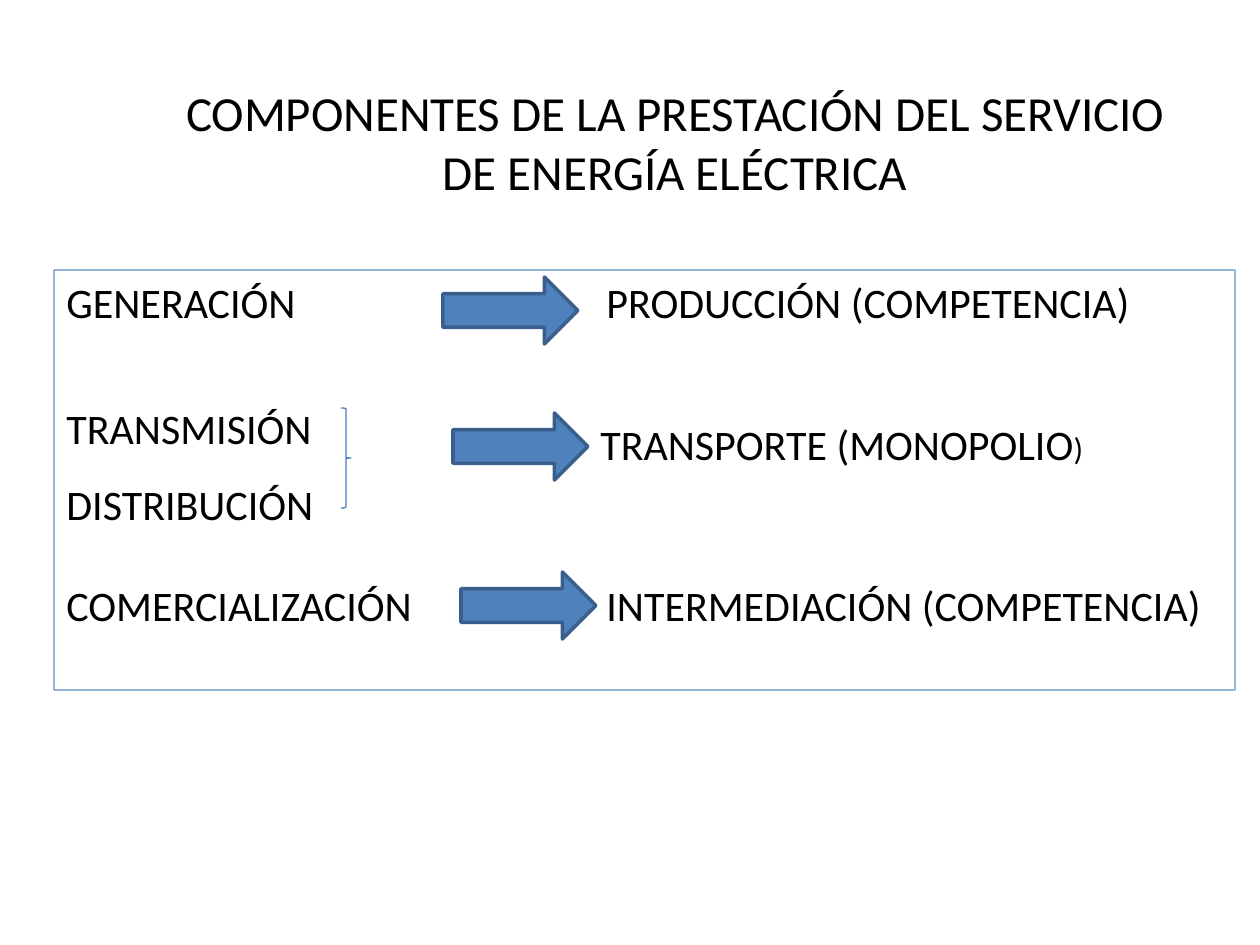
from typing import NamedTuple

from lxml.etree import SubElement
from pptx import Presentation
from pptx.dml.color import RGBColor
from pptx.enum.shapes import MSO_SHAPE
from pptx.enum.text import MSO_ANCHOR, PP_ALIGN
from pptx.oxml.ns import qn
from pptx.util import Emu, Pt

PIXELS_PER_INCH = 126
BLACK = RGBColor(0x00, 0x00, 0x00)
ARROW_BLUE = RGBColor(0x4F, 0x81, 0xBD)
ARROW_EDGE = RGBColor(0x3A, 0x5F, 0x8C)
LINE_BLUE = RGBColor(0x4B, 0x7E, 0xBC)
FONT = "Calibri"
ROLE_TAB = 540
ARROW_SIZE = (135, 67)


class Box(NamedTuple):
    left: int
    top: int
    width: int
    height: int


class Component(NamedTuple):
    text: str
    space_before: int = 0
    line_spacing: float = 1.0


COMPONENTS = [
    Component("GENERACIÓN\tPRODUCCIÓN (COMPETENCIA)"),
    Component("TRANSMISIÓN", space_before=29, line_spacing=1.5),
    Component("DISTRIBUCIÓN", line_spacing=1.5),
    Component("COMERCIALIZACIÓN\tINTERMEDIACIÓN (COMPETENCIA)", space_before=29),
]
ARROW_CORNERS = [(443, 277), (453, 413), (461, 572)]


def px(length: int) -> Emu:
    return Emu(round(length * 914400 / PIXELS_PER_INCH))


def add_outline(slide, kind, box: Box, color: RGBColor, width: float, fill=None):
    shape = slide.shapes.add_shape(kind, *map(px, box))
    shape.shadow.inherit = False
    if fill is None:
        shape.fill.background()
    else:
        shape.fill.solid()
        shape.fill.fore_color.rgb = fill
    shape.line.color.rgb = color
    shape.line.width = Pt(width)
    return shape


def add_text_box(slide, box: Box):
    shape = slide.shapes.add_textbox(*map(px, box))
    shape.text_frame.word_wrap = True
    return shape


def write(paragraph, text: str, *, size: int = 24, align=PP_ALIGN.LEFT,
          space_before: int = 0, line_spacing: float = 1.0) -> None:
    paragraph.alignment = align
    paragraph.space_before = Pt(space_before)
    paragraph.line_spacing = line_spacing
    run = paragraph.add_run()
    run.text = text
    run.font.name = FONT
    run.font.size = Pt(size)
    run.font.color.rgb = BLACK


def add_tab_stop(paragraph, position: int) -> None:
    properties = paragraph._p.get_or_add_pPr()
    tabs = SubElement(properties, qn("a:tabLst"))
    SubElement(tabs, qn("a:tab"), pos=str(px(position)), algn="l")


def main() -> None:
    presentation = Presentation()
    presentation.slide_width, presentation.slide_height = px(1260), px(945)
    slide = presentation.slides.add_slide(presentation.slide_layouts[6])

    # Brace joining transmission and distribution
    add_outline(slide, MSO_SHAPE.RIGHT_BRACE, Box(341, 408, 10, 100), LINE_BLUE, 0.75)

    # Title
    title = add_text_box(slide, Box(144, 76, 1062, 131))
    write(title.text_frame.paragraphs[0],
          "COMPONENTES DE LA PRESTACIÓN DEL SERVICIO DE ENERGÍA ELÉCTRICA",
          size=28, align=PP_ALIGN.CENTER)

    # Framed list of components and their roles
    frame = add_outline(slide, MSO_SHAPE.RECTANGLE, Box(54, 270, 1181, 420), LINE_BLUE, 0.75)
    line_color = frame.line._ln.find(".//" + qn("a:srgbClr"))
    SubElement(line_color, qn("a:alpha"), val="87000")
    text_frame = frame.text_frame
    text_frame.word_wrap = True
    text_frame.vertical_anchor = MSO_ANCHOR.TOP
    for index, component in enumerate(COMPONENTS):
        paragraph = text_frame.add_paragraph() if index else text_frame.paragraphs[0]
        write(paragraph, component.text, space_before=component.space_before,
              line_spacing=component.line_spacing)
        if "\t" in component.text:
            add_tab_stop(paragraph, ROLE_TAB)

    # Arrows from component to role
    for left, top in ARROW_CORNERS:
        add_outline(slide, MSO_SHAPE.RIGHT_ARROW, Box(left, top, *ARROW_SIZE),
                    ARROW_EDGE, 2, fill=ARROW_BLUE)

    # Role shared by transmission and distribution
    transport = add_text_box(slide, Box(588, 412, 556, 102)).text_frame.paragraphs[0]
    write(transport, "TRANSPORTE (MONOPOLIO")
    write(transport, ")", size=18)

    presentation.save("out.pptx")


if __name__ == "__main__":
    main()
